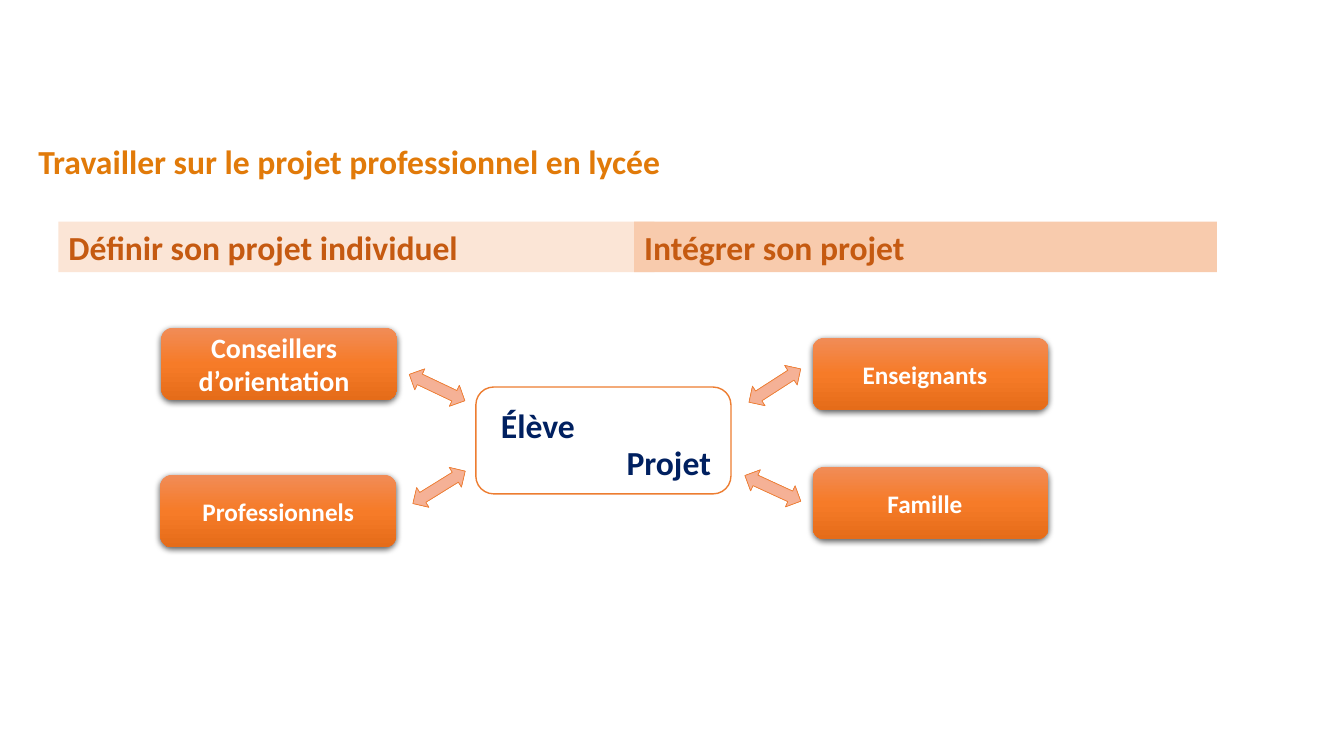
"""Build the slide on the professional project at the lycée."""
from lxml import etree
from pptx import Presentation
from pptx import util as u
from pptx.dml.color import RGBColor
from pptx.enum import shapes, text
from pptx.oxml import ns

PX = 9144
WHITE = RGBColor(0xFF, 0xFF, 0xFF)
AMBER = RGBColor(0xE1, 0x7A, 0x09)
RUST = RGBColor(0xC5, 0x5A, 0x11)
ORANGE = RGBColor(0xED, 0x7D, 0x31)
NAVY = RGBColor(0x00, 0x20, 0x60)
PEACH = RGBColor(0xFB, 0xE5, 0xD6)
APRICOT = RGBColor(0xF8, 0xCB, 0xAD)
BLACK = RGBColor(0x00, 0x00, 0x00)
BOX_SHADES = (RGBColor(0xF1, 0x8C, 0x57), RGBColor(0xF6, 0x7B, 0x28), RGBColor(0xE5, 0x6C, 0x19))
ARROW_SHADES = (RGBColor(0xF7, 0xBD, 0xA5), RGBColor(0xF5, 0xB1, 0x96), RGBColor(0xF8, 0xA5, 0x82))
LEFT, CENTER, RIGHT, JUSTIFY = (
    text.PP_ALIGN.LEFT, text.PP_ALIGN.CENTER, text.PP_ALIGN.RIGHT, text.PP_ALIGN.JUSTIFY)
KIND = shapes.MSO_SHAPE


def px(length):
    """Turn px into EMU."""
    return u.Emu(length * PX)


def apply(target, values):
    """Set each attribute of the target from a dict."""
    for name, value in values.items():
        setattr(target, name, value)


def write(box, words, size, color, align):
    """Write one bold paragraph into a box."""
    box.text_frame.word_wrap = True
    para = box.text_frame.paragraphs[0]
    para.alignment = align
    span = para.add_run()
    span.text = words
    apply(span.font, {"name": "Calibri", "size": u.Pt(size), "bold": True})
    span.font.color.rgb = color


def add_shape(parent, kind, place, fill=None, line=None, width=1):
    """Add a flat preset shape."""
    shape = parent.add_shape(kind, *map(px, place))
    shape.shadow.inherit = False
    if fill is not None:
        shape.fill.solid()
        shape.fill.fore_color.rgb = fill
    if line is None:
        shape.line.fill.background()
    else:
        shape.line.color.rgb = line
        shape.line.width = u.Pt(width)
    return shape


def add_color(parent, color):
    """Append an RGB colour element."""
    return etree.SubElement(parent, ns.qn("a:srgbClr"), val=str(color))


def shade(shape, colors):
    """Fill a shape with an even gradient from top to bottom."""
    shape.fill.gradient()
    shape.fill.gradient_angle = 270
    stops = shape._element.spPr.find(".//" + ns.qn("a:gsLst"))
    for stop in list(stops):
        stops.remove(stop)
    for index, color in enumerate(colors):
        position = index * 100000 // (len(colors) - 1)
        add_color(etree.SubElement(stops, ns.qn("a:gs"), pos=str(position)), color)


def drop_shadow(shape):
    """Give a shape a soft shadow below it."""
    effects = shape._element.spPr.find(ns.qn("a:effectLst"))
    shadow = etree.SubElement(
        effects, ns.qn("a:outerShdw"), blurRad=str(u.Pt(4.5)), dist=str(u.Pt(1.5)),
        dir="5400000", rotWithShape="0")
    etree.SubElement(add_color(shadow, BLACK), ns.qn("a:alpha"), val="63000")


def add_title(page, words):
    """Fill the title placeholder."""
    title = page.shapes.title
    apply(title, dict(zip(("left", "top", "width", "height"), map(px, (28, 135, 651, 50)))))
    write(title, words, 24, AMBER, LEFT)
    apply(title.text_frame, {"word_wrap": False, "vertical_anchor": text.MSO_ANCHOR.TOP})


def add_label(parent, words, place, fill, color, align):
    """Add a filled rectangle with text."""
    write(add_shape(parent, KIND.RECTANGLE, place, fill), words, 24, color, align)


def add_partner(page, words, left, top, size, inset):
    """Add a shaded box for one partner of the pupil."""
    box = add_shape(page.shapes, KIND.ROUNDED_RECTANGLE, (left, top, 234, 72))
    shade(box, BOX_SHADES)
    drop_shadow(box)
    write(box, words, size, WHITE, CENTER)
    box.text_frame.margin_right = px(inset)


def add_pupil(page):
    """Add the central frame of the pupil and the project."""
    group = page.shapes.add_group_shape().shapes
    add_shape(group, KIND.ROUNDED_RECTANGLE, (472, 384, 253, 106), WHITE, ORANGE)
    add_label(group, "Élève", (487, 397, 114, 50), WHITE, NAVY, LEFT)
    add_label(group, "Projet", (582, 433, 133, 50), WHITE, NAVY, RIGHT)


def add_arrow(page, left, top, rotation):
    """Add a turned double arrow."""
    arrow = add_shape(
        page.shapes, KIND.LEFT_RIGHT_ARROW, (left, top, 61, 23), line=ORANGE, width=0.5)
    shade(arrow, ARROW_SHADES)
    arrow.rotation = rotation


def main():
    """Build and save the slide."""
    deck = Presentation()
    apply(deck, {"slide_width": px(1333), "slide_height": px(750)})
    page = deck.slides.add_slide(deck.slide_layouts[5])
    add_title(page, "Travailler sur le projet professionnel en lycée")
    for partner in (
        ("Famille", 806, 463, 18, 21),
        ("Professionnels", 159, 471, 18, 10),
        ("Conseillers d’orientation", 160, 325, 20, 20),
        ("Enseignants", 806, 335, 18, 21),
    ):
        add_partner(page, *partner)
    add_label(page.shapes, "Définir son projet individuel", (58, 220, 591, 50), PEACH, RUST, JUSTIFY)
    add_label(page.shapes, "Intégrer son projet", (629, 220, 578, 50), APRICOT, RUST, JUSTIFY)
    add_pupil(page)
    for arrow in ((738, 371, 147.2), (736, 473, 204.7), (403, 373, 205.4), (405, 472, 328.2)):
        add_arrow(page, *arrow)
    deck.save("out.pptx")


if __name__ == "__main__":
    main()
